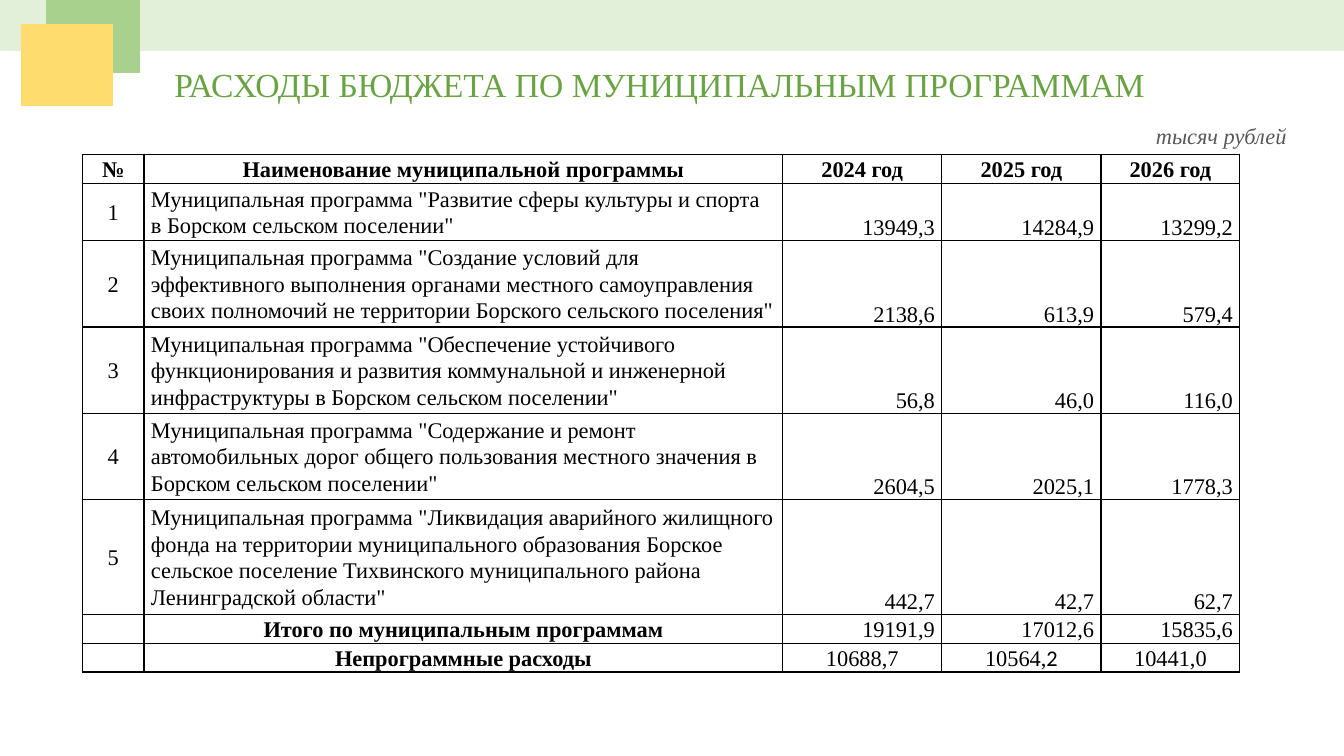
"""Build the slide on budget spending by municipal programme."""
from dataclasses import dataclass
from typing import Any

import lxml.etree
import pptx
import pptx.dml.color
import pptx.enum.shapes
import pptx.enum.text
import pptx.oxml
import pptx.oxml.ns
import pptx.util

Pt = pptx.util.Pt
ALIGN = pptx.enum.text.PP_ALIGN
ANCHOR = pptx.enum.text.MSO_ANCHOR
SERIF = "Times New Roman"


@dataclass
class Block:
    left: float
    top: float
    width: float
    height: float
    color: str


@dataclass
class Caption:
    left: float
    top: float
    width: float
    height: float
    text: str
    color: str
    font: dict[str, Any]


@dataclass
class Row:
    number: str
    name: str
    values: tuple[str, str, str]
    height: float
    kind: str = "programme"


BLOCKS = [
    Block(0, 0, 960, 36, "E2F0D9"),
    Block(33.5, 0, 66, 51.5, "A9D18E"),
    Block(15.5, 17.5, 65, 58, "FFDC6D"),
]
CAPTIONS = [
    Caption(117.4, 42, 715, 36, "РАСХОДЫ БЮДЖЕТА ПО МУНИЦИПАЛЬНЫМ ПРОГРАММАМ", "6AA343",
            {"name": SERIF, "size": Pt(24)}),
    Caption(818.6, 83.5, 109.5, 26.6, "тысяч рублей", "595959",
            {"name": SERIF, "size": Pt(16), "italic": True}),
]
COLUMNS = [43.9, 456.2, 113.7, 113.7, 99.2]
ROWS = [
    Row("№", "Наименование муниципальной программы", ("2024 год", "2025 год", "2026 год"), 20.4, "header"),
    Row("1", 'Муниципальная программа "Развитие сферы культуры и спорта в Борском сельском поселении"',
        ("13949,3", "14284,9", "13299,2"), 40.8),
    Row("2", 'Муниципальная программа "Создание условий для эффективного выполнения органами местного '
        'самоуправления своих полномочий не территории Борского сельского поселения"',
        ("2138,6", "613,9", "579,4"), 61.6),
    Row("3", 'Муниципальная программа "Обеспечение устойчивого функционирования и развития коммунальной '
        'и инженерной инфраструктуры в Борском сельском поселении"', ("56,8", "46,0", "116,0"), 61.6),
    Row("4", 'Муниципальная программа "Содержание и ремонт автомобильных дорог общего пользования '
        'местного значения в Борском сельском поселении"', ("2604,5", "2025,1", "1778,3"), 61.6),
    Row("5", 'Муниципальная программа "Ликвидация аварийного жилищного фонда на территории муниципального '
        'образования Борское сельское поселение Тихвинского муниципального района Ленинградской области"',
        ("442,7", "42,7", "62,7"), 82),
    Row("", "Итого по муниципальным программам", ("19191,9", "17012,6", "15835,6"), 20.4, "total"),
    Row("", "Непрограммные расходы", ("10688,7", "10564,2", "10441,0"), 20.4, "other"),
]
VALUE_ALIGN = {"header": ALIGN.CENTER, "programme": ALIGN.RIGHT, "total": ALIGN.RIGHT, "other": ALIGN.CENTER}


def rgb(color: str) -> pptx.dml.color.RGBColor:
    """Turn a hex string into a colour."""
    return pptx.dml.color.RGBColor.from_string(color)


def apply(target: Any, formats: dict[str, Any]) -> None:
    """Set every attribute named in the formats."""
    for name, value in formats.items():
        setattr(target, name, value)


def add_span(para: Any, text: str, color: str, font: dict[str, Any]) -> None:
    """Add one formatted span to a paragraph."""
    span = para.add_run()
    span.text = text
    apply(span.font, font)
    span.font.color.rgb = rgb(color)


def add_caption(page: Any, caption: Caption) -> None:
    """Add a one-line text box."""
    box = page.shapes.add_textbox(Pt(caption.left), Pt(caption.top), Pt(caption.width), Pt(caption.height))
    apply(box.text_frame, {"word_wrap": False, "auto_size": pptx.enum.text.MSO_AUTO_SIZE.SHAPE_TO_FIT_TEXT})
    add_span(box.text_frame.paragraphs[0], caption.text, caption.color, caption.font)


def add_block(page: Any, block: Block) -> None:
    """Add a plain coloured rectangle."""
    shape = page.shapes.add_shape(pptx.enum.shapes.MSO_SHAPE.RECTANGLE, Pt(block.left), Pt(block.top),
                                  Pt(block.width), Pt(block.height))
    shape.shadow.inherit = False
    shape.fill.solid()
    shape.fill.fore_color.rgb = rgb(block.color)
    shape.line.color.rgb = rgb(block.color)
    shape.line.width = Pt(1)


def add_borders(cell: Any) -> None:
    """Draw a black one-point line on each side of a cell."""
    properties = cell._tc.get_or_add_tcPr()
    for place, side in enumerate(("lnL", "lnR", "lnT", "lnB")):
        properties.insert(place, pptx.oxml.parse_xml(
            f'<a:{side} {pptx.oxml.ns.nsdecls("a")} w="{Pt(1)}">'
            f'<a:solidFill><a:srgbClr val="000000"/></a:solidFill></a:{side}>'))


def fill_cell(cell: Any, row: Row, column: int) -> None:
    """Write and format one cell of the table."""
    text = (row.number, row.name, *row.values)[column]
    is_value = column > 1
    is_programme = row.kind == "programme"
    bottom = is_programme and is_value
    apply(cell, {"margin_left": Pt(5), "margin_right": Pt(5), "margin_top": 0, "margin_bottom": 0,
                 "vertical_anchor": ANCHOR.BOTTOM if bottom else ANCHOR.MIDDLE})
    cell.fill.background()
    add_borders(cell)
    para = cell.text_frame.paragraphs[0]
    align = VALUE_ALIGN[row.kind] if is_value else ALIGN.CENTER
    apply(para, {"line_spacing": 1.07, "alignment": ALIGN.LEFT if is_programme and column == 1 else align})
    bold = row.kind == "header" or (column == 1 and not is_programme)
    font = {"name": SERIF, "size": Pt(16), "bold": bold}
    if not text:
        lxml.etree.SubElement(para._p, pptx.oxml.ns.qn("a:endParaRPr"), sz="1600")
    elif row.kind == "other" and column == 3:
        add_span(para, text[:-1], "000000", font)
        add_span(para, text[-1], "000000", font | {"name": "Calibri"})
    else:
        add_span(para, text, "000000", font)


def add_budget(page: Any) -> None:
    """Add the table of spending by programme."""
    height = sum(row.height for row in ROWS)
    frame = page.shapes.add_table(len(ROWS), len(COLUMNS), Pt(59), Pt(110.4), Pt(sum(COLUMNS)), Pt(height))
    table = frame.table
    apply(table, {"first_row": False, "horz_banding": False})
    for column, width in enumerate(COLUMNS):
        table.columns[column].width = Pt(width)
    for index, row in enumerate(ROWS):
        table.rows[index].height = Pt(row.height)
        for column in range(len(COLUMNS)):
            fill_cell(table.cell(index, column), row, column)


def main() -> None:
    """Build and save the deck."""
    deck = pptx.Presentation()
    apply(deck, {"slide_width": Pt(960), "slide_height": Pt(540)})
    page = deck.slides.add_slide(deck.slide_layouts[6])
    for caption in CAPTIONS:
        add_caption(page, caption)
    for block in BLOCKS:
        add_block(page, block)
    add_budget(page)
    deck.save("out.pptx")


if __name__ == "__main__":
    main()
